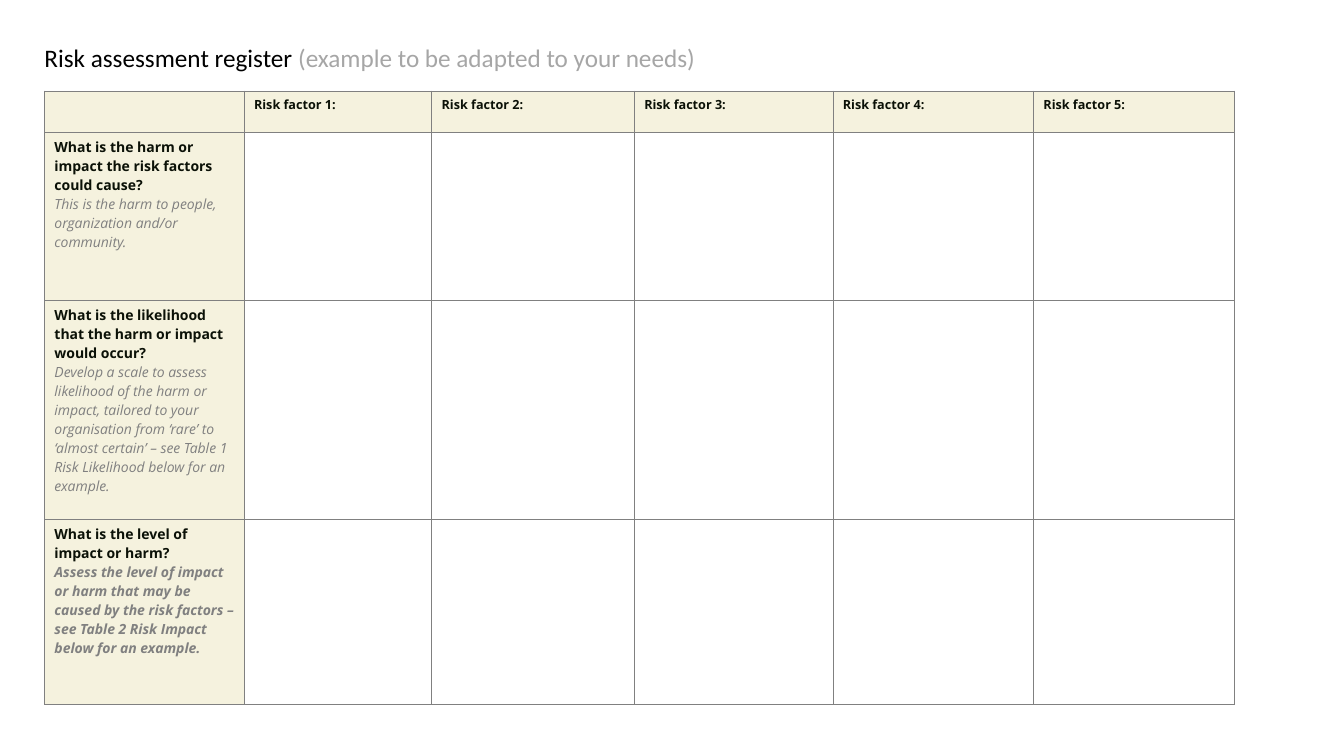
from lxml import etree
from pptx import Presentation
from pptx.dml.color import RGBColor
from pptx.enum.text import MSO_ANCHOR, MSO_AUTO_SIZE, PP_ALIGN
from pptx.oxml.ns import qn
from pptx.util import Inches, Pt

LEFT = PP_ALIGN.LEFT
TOP = MSO_ANCHOR.TOP
NO_AUTOFIT = MSO_AUTO_SIZE.NONE

BLACK = RGBColor(0x00, 0x00, 0x00)
WHITE = RGBColor(0xFF, 0xFF, 0xFF)
INK = RGBColor(0x0B, 0x11, 0x07)
GRAY = RGBColor(0x80, 0x80, 0x80)
LIGHT_GRAY = RGBColor(0xA6, 0xA6, 0xA6)
CREAM = RGBColor(0xF5, 0xF2, 0xDE)

COLUMN_WIDTHS = [1.98, 1.86, 2.01, 1.97, 1.99, 1.99]
ROW_HEIGHTS = [0.41, 1.67, 2.17, 1.84]
# Question, guidance, whether the guidance is bold
QUESTIONS = [
    ("What is the harm or impact the risk factors could cause?",
     "This is the harm to people, organization and/or community.", False),
    ("What is the likelihood that the harm or impact would occur?",
     "Develop a scale to assess likelihood of the harm or impact, tailored to "
     "your organisation from ‘rare’ to ‘almost certain’ – see Table 1 Risk "
     "Likelihood below for an example.", False),
    ("What is the level of impact or harm?",
     "Assess the level of impact or harm that may be caused by the risk "
     "factors – see Table 2 Risk Impact below for an example.", True),
]


def write(paragraph, text, *, font, size, color, bold=False, italic=False):
    """Append a formatted run to a paragraph."""
    run = paragraph.add_run()
    run.text = text
    run.font.name = font
    run.font.size = Pt(size)
    run.font.color.rgb = color
    run.font.bold = bold
    run.font.italic = italic


class RegisterSlide:
    """Holds the slide and the style of the risk register."""

    title_font = "Calibri"
    table_font = "Open Sans"
    border_width = Pt(0.25)

    def __init__(self, presentation):
        self.slide = presentation.slides.add_slide(presentation.slide_layouts[5])

    def title(self, heading, hint):
        title = self.slide.shapes.title
        title.left, title.top = Inches(0.34), Inches(0.37)
        title.width, title.height = Inches(6.77), Inches(0.4)
        frame = title.text_frame
        frame.auto_size = NO_AUTOFIT
        frame.vertical_anchor = TOP
        line = frame.paragraphs[0]
        line.alignment = LEFT
        write(line, heading, font=self.title_font, size=18, color=BLACK)
        write(line, hint, font=self.title_font, size=18, color=LIGHT_GRAY)

    def border(self, cell):
        properties = cell._tc.get_or_add_tcPr()
        for position, side in enumerate(("a:lnL", "a:lnR", "a:lnT", "a:lnB")):
            line = etree.Element(qn(side), w=str(self.border_width))
            fill = etree.SubElement(line, qn("a:solidFill"))
            etree.SubElement(fill, qn("a:srgbClr"), val=str(GRAY))
            properties.insert(position, line)

    def register(self, left, top):
        table = self.slide.shapes.add_table(
            len(ROW_HEIGHTS), len(COLUMN_WIDTHS), Inches(left), Inches(top),
            Inches(sum(COLUMN_WIDTHS)), Inches(sum(ROW_HEIGHTS))).table
        table.horz_banding = False
        for column, width in zip(table.columns, COLUMN_WIDTHS):
            column.width = Inches(width)
        for row, height in zip(table.rows, ROW_HEIGHTS):
            row.height = Inches(height)

        for r in range(len(ROW_HEIGHTS)):
            for c in range(len(COLUMN_WIDTHS)):
                cell = table.cell(r, c)
                cell.fill.solid()
                cell.fill.fore_color.rgb = CREAM if r == 0 or c == 0 else WHITE
                self.border(cell)

        for number in range(1, len(COLUMN_WIDTHS)):
            heading = table.cell(0, number).text_frame.paragraphs[0]
            write(heading, f"Risk factor {number}:", font=self.table_font,
                  size=9, color=INK, bold=True)
        for r, (question, guidance, strong) in enumerate(QUESTIONS, start=1):
            frame = table.cell(r, 0).text_frame
            write(frame.paragraphs[0], question, font=self.table_font,
                  size=10, color=INK, bold=True)
            write(frame.add_paragraph(), guidance, font=self.table_font,
                  size=10, color=GRAY, bold=strong, italic=True)


def main():
    presentation = Presentation()
    presentation.slide_width = Inches(13.33)
    presentation.slide_height = Inches(7.5)
    page = RegisterSlide(presentation)
    page.title("Risk assessment register ", "(example to be adapted to your needs)")
    page.register(0.44, 0.9)
    presentation.save("out.pptx")


if __name__ == "__main__":
    main()
